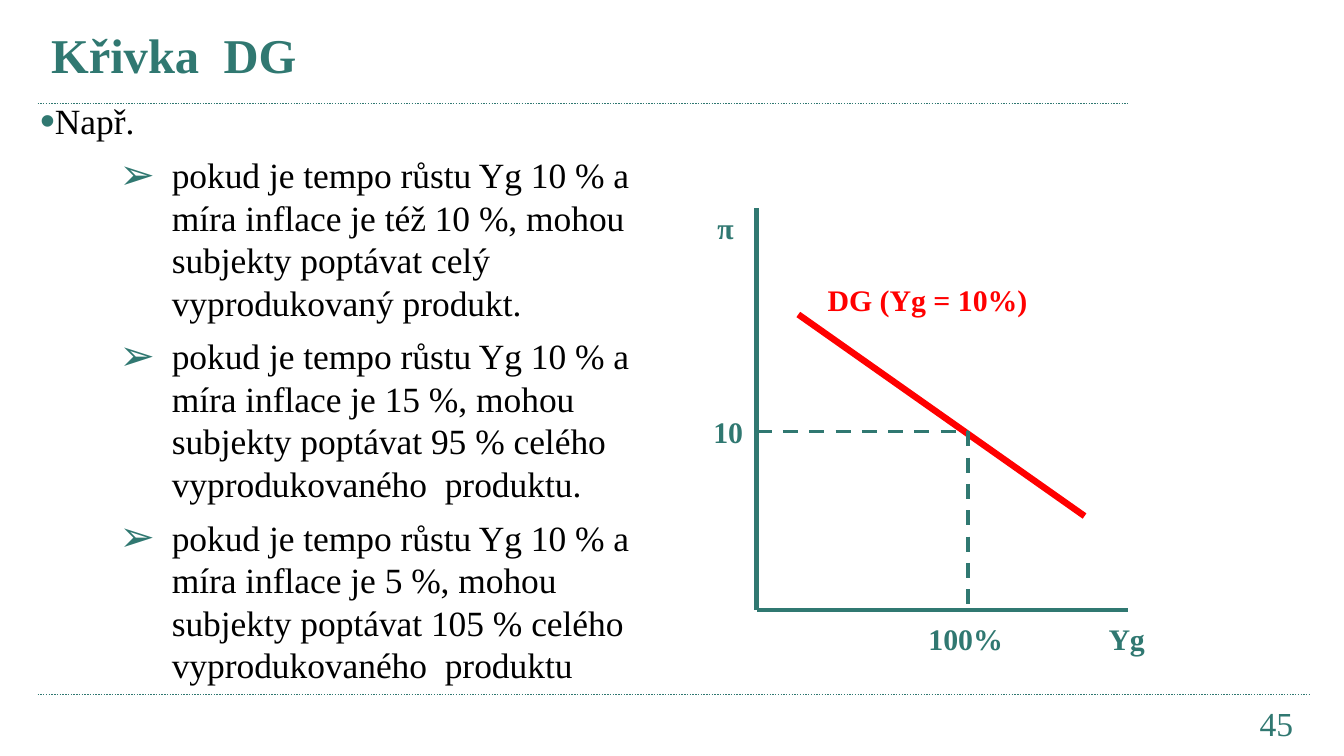
from lxml.etree import SubElement
from pptx import Presentation
from pptx.dml.color import RGBColor
from pptx.enum.dml import MSO_LINE
from pptx.enum.shapes import MSO_CONNECTOR
from pptx.enum.text import MSO_ANCHOR, PP_ALIGN
from pptx.oxml.ns import qn
from pptx.util import Inches, Pt

FONT = "Times New Roman"
TEAL = "307871"
RED = "FF0000"
BLACK = "000000"

SLIDE_WIDTH = 10
SLIDE_HEIGHT = SLIDE_WIDTH * 9 / 16

AXIS_LEFT, AXIS_RIGHT = 5.63, 8.39
AXIS_TOP, AXIS_BOTTOM = 1.55, 4.54
POINT_X, POINT_Y = 7.2, 3.21

EXAMPLES = [
    "pokud je tempo růstu Yg 10 % a míra inflace je též 10 %, mohou "
    "subjekty poptávat celý vyprodukovaný produkt.",
    "pokud je tempo růstu Yg 10 % a míra inflace je 15 %, mohou "
    "subjekty poptávat 95 % celého vyprodukovaného  produktu.",
    "pokud je tempo růstu Yg 10 % a míra inflace je 5 %, mohou "
    "subjekty poptávat 105 % celého vyprodukovaného  produktu",
]


def color(hex_value):
    return RGBColor.from_string(hex_value)


def write(paragraph, text, size=16, fill=TEAL, bold=False, align=PP_ALIGN.LEFT):
    paragraph.alignment = align
    run = paragraph.add_run()
    run.text = text
    run.font.name = FONT
    run.font.size = Pt(size)
    run.font.bold = bold
    run.font.color.rgb = color(fill)


def add_text_box(slide, left, top, width, height):
    shape = slide.shapes.add_textbox(
        Inches(left), Inches(top), Inches(width), Inches(height))
    shape.text_frame.word_wrap = True
    return shape.text_frame


def add_label(slide, text, left, top, width, fill=TEAL):
    frame = add_text_box(slide, left, top, width, 0.37)
    write(frame.paragraphs[0], text, fill=fill, bold=True)


def add_line(slide, start, end, width, fill=TEAL, dash=None):
    connector = slide.shapes.add_connector(
        MSO_CONNECTOR.STRAIGHT, *map(Inches, start + end))
    connector.line.color.rgb = color(fill)
    connector.line.width = Pt(width)
    if dash:
        connector.line.dash_style = dash
    SubElement(connector._element.spPr, qn("a:effectLst"))


def add_bullet(paragraph, character, margin, indent):
    properties = paragraph._p.get_or_add_pPr()
    properties.set("marL", str(Inches(margin)))
    properties.set("indent", str(Inches(-indent)))
    bullet_color = SubElement(properties, qn("a:buClr"))
    SubElement(bullet_color, qn("a:srgbClr"), val=TEAL)
    SubElement(properties, qn("a:buSzPct"), val="120000")
    SubElement(properties, qn("a:buFont"), typeface="Arial")
    SubElement(properties, qn("a:buChar"), char=character)
    paragraph.space_after = Pt(6)


def add_title(slide, text):
    title = slide.shapes.title
    title.left, title.top = Inches(0.28), Inches(0.14)
    title.width, title.height = Inches(8.86), Inches(0.56)
    title.text_frame.vertical_anchor = MSO_ANCHOR.MIDDLE
    title.text_frame.margin_bottom = Inches(0.08)
    write(title.text_frame.paragraphs[0], text, size=26, bold=True)


def add_body(slide):
    frame = add_text_box(slide, 0.2, 0.69, 4.8, 4.64)
    introduction = frame.paragraphs[0]
    add_bullet(introduction, "•", 0.11, 0.11)
    write(introduction, "Např.", size=19, fill=BLACK, align=PP_ALIGN.JUSTIFY)
    for example in EXAMPLES:
        paragraph = frame.add_paragraph()
        add_bullet(paragraph, "➢", 0.98, 0.39)
        write(paragraph, example, size=19, fill=BLACK)


def add_page_number(slide, number):
    frame = add_text_box(slide, 8.54, 5.17, 1.18, 0.3)
    frame.margin_top = Inches(0.06)
    frame.margin_bottom = 0
    write(frame.paragraphs[0], number, size=18, align=PP_ALIGN.RIGHT)


def add_diagram(slide):
    origin = (AXIS_LEFT, AXIS_BOTTOM)
    point = (POINT_X, POINT_Y)
    add_line(slide, origin, (AXIS_RIGHT, AXIS_BOTTOM), 2.5)
    add_line(slide, origin, (AXIS_LEFT, AXIS_TOP), 2.5)
    add_line(slide, (5.94, 2.34), (8.07, 3.84), 3.5, fill=RED)
    add_line(slide, (AXIS_LEFT, POINT_Y), point, 2, dash=MSO_LINE.DASH)
    add_line(slide, point, (POINT_X, AXIS_BOTTOM), 2, dash=MSO_LINE.DASH)
    add_label(slide, "DG (Yg = 10%)", 6.06, 2.05, 1.78, fill=RED)
    add_label(slide, "Yg", 8.15, 4.57, 0.47)
    add_label(slide, "π", 5.24, 1.51, 0.47)
    add_label(slide, "10", 5.21, 3.03, 0.47)
    add_label(slide, "100%", 6.81, 4.57, 0.87)


def main():
    presentation = Presentation()
    presentation.slide_width = Inches(SLIDE_WIDTH)
    presentation.slide_height = Inches(SLIDE_HEIGHT)
    slide = presentation.slides.add_slide(presentation.slide_layouts[5])
    for right, height in ((8.39, 0.77), (9.75, 5.17)):
        add_line(slide, (0.28, height), (right, height), 0.75,
                 dash=MSO_LINE.ROUND_DOT)
    add_body(slide)
    add_title(slide, "Křivka  DG")
    add_page_number(slide, "45")
    add_diagram(slide)
    presentation.save("out.pptx")


if __name__ == "__main__":
    main()
